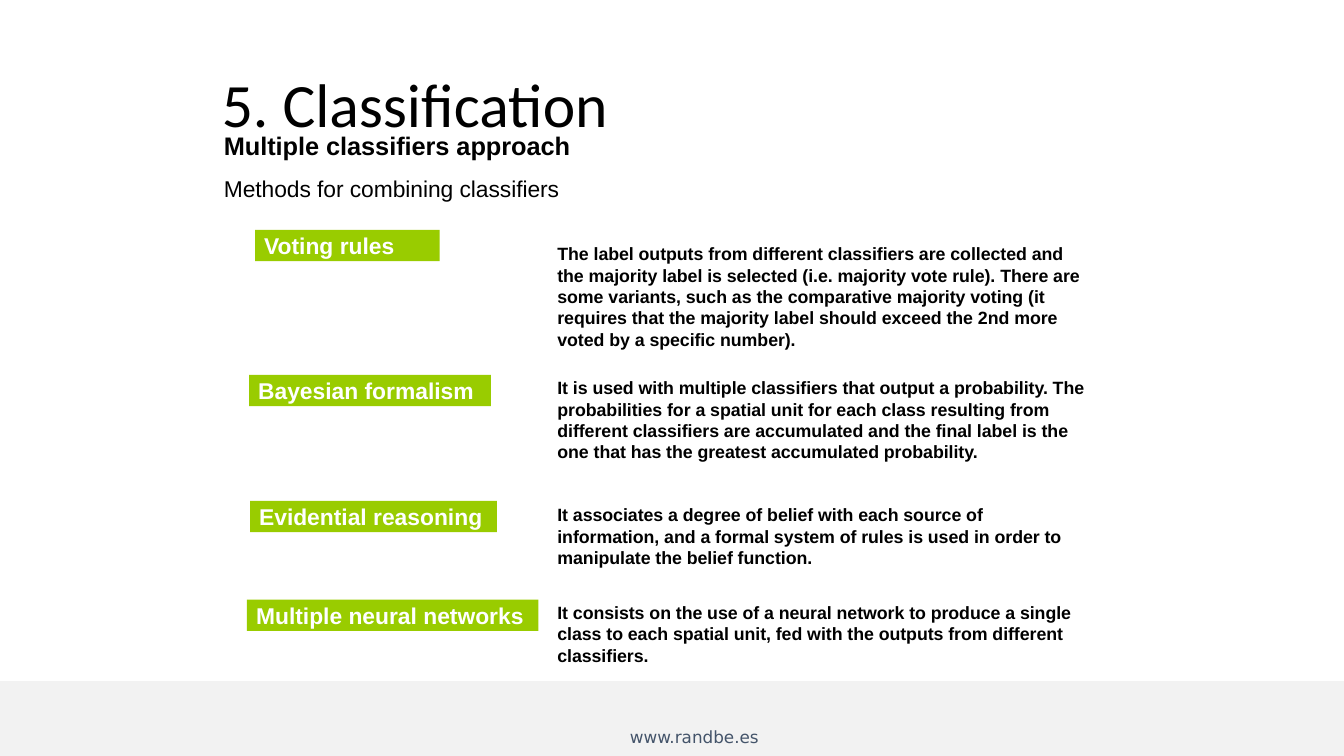
from pptx import Presentation
from pptx import util as u
from pptx.dml.color import RGBColor
from pptx.enum import shapes, text

WIDE, HIGH = u.Inches(13.33), u.Inches(7.5)
BLACK = RGBColor(0x00, 0x00, 0x00)
WHITE = RGBColor(0xFF, 0xFF, 0xFF)
GREEN = RGBColor(0x99, 0xCC, 0x00)
GREY = RGBColor(0xF2, 0xF2, 0xF2)
SLATE = RGBColor(0x44, 0x54, 0x6A)
LABEL_HIGH, LINE_HIGH, BODY_LEFT = 4.13, 2.85, 41.4

METHODS = [
    ("Voting rules", (18.98, 30.4, 13.73), (32.13, 39.3, 5),
     "The label outputs from different classifiers are collected and "
     "the majority label is selected (i.e. majority vote rule). There are "
     "some variants, such as the comparative majority voting (it "
     "requires that the majority label should exceed the 2nd more "
     "voted by a specific number)."),
    ("Bayesian formalism", (18.53, 49.6, 18), (49.87, 39.68, 4),
     "It is used with multiple classifiers that output a probability. The "
     "probabilities for a spatial unit for each class resulting from "
     "different classifiers are accumulated and the final label is the "
     "one that has the greatest accumulated probability."),
    ("Evidential reasoning", (18.6, 66.27, 18.38), (66.67, 37.88, 3),
     "It associates a degree of belief with each source of "
     "information, and a formal system of rules is used in order to "
     "manipulate the belief function."),
    ("Multiple neural networks", (18.38, 79.33, 21.68), (79.6, 38.55, 3),
     "It consists on the use of a neural network to produce a single "
     "class to each spatial unit, fed with the outputs from different "
     "classifiers."),
]


def place(left, top, wide, high):
    """Turn percentages of the slide into lengths."""
    return (int(WIDE * left / 100), int(HIGH * top / 100),
            int(WIDE * wide / 100), int(HIGH * high / 100))


def setup(frame, left=0.01, top=0, anchor=text.MSO_ANCHOR.TOP):
    """Set the insets, wrapping and anchor of a text frame."""
    frame.word_wrap = True
    frame.auto_size = text.MSO_AUTO_SIZE.NONE
    frame.vertical_anchor = anchor
    frame.margin_left, frame.margin_top = u.Inches(left), u.Inches(top)
    frame.margin_right = frame.margin_bottom = 0
    return frame


def write(para, words, size, color=BLACK, bold=False, face="Arial", tight=True):
    """Add one formatted run to a left-aligned paragraph."""
    para.alignment = text.PP_ALIGN.LEFT
    run = para.add_run()
    run.text = words
    font = run.font
    font.name, font.size, font.bold = face, u.Pt(size), bold
    font.color.rgb = color
    if tight:
        font._element.set("spc", "-5")


def block(slide, box, fill):
    """Draw a plain filled rectangle."""
    shape = slide.shapes.add_shape(shapes.MSO_SHAPE.RECTANGLE, *place(*box))
    shape.shadow.inherit = False
    shape.fill.solid()
    shape.fill.fore_color.rgb = fill
    shape.line.fill.background()
    return shape


def label(slide, words, left, top, wide):
    """Draw a green method label."""
    shape = block(slide, (left, top, wide, LABEL_HIGH), GREEN)
    frame = setup(shape.text_frame, 0.09, anchor=text.MSO_ANCHOR.MIDDLE)
    write(frame.paragraphs[0], words, 16.3, WHITE, True, tight=False)


def area(slide, box, left=0.01, top=0):
    """Add a text box and return its frame."""
    return setup(slide.shapes.add_textbox(*place(*box)).text_frame, left, top)


def detail(slide, words, top, wide, lines):
    """Add the description of a method."""
    frame = area(slide, (BODY_LEFT, top, wide, lines * LINE_HIGH))
    write(frame.paragraphs[0], words, 12.7, bold=True)


def footer(slide):
    """Draw the grey band with the web address."""
    band = block(slide, (0, 90.13, 100, 9.87), GREY)
    band.line.color.rgb = GREY
    band.line.width = u.Pt(1)
    frame = area(slide, (46.13, 95.47, 12.9, 4), 0.1, 0.05)
    write(frame.paragraphs[0], "www.randbe.es", 12, SLATE,
          face="DejaVu Sans", tight=False)


def heading(slide):
    """Fill the title and the two lines below it."""
    title = slide.shapes.title
    title.left, title.top, title.width, title.height = place(
        16.43, 8.67, 78.3, 9.87)
    para = setup(title.text_frame, anchor=text.MSO_ANCHOR.MIDDLE).paragraphs[0]
    write(para, "5. ", 44, face="Calibri", tight=False)
    write(para, "Classification", 44, face="Calibri")
    frame = area(slide, (16.58, 17.2, 26.1, 9.6))
    write(frame.paragraphs[0], "Multiple classifiers approach", 18.1, bold=True)
    para = frame.add_paragraph()
    para.space_before = u.Pt(9.8)
    write(para, "Methods for combining classifiers", 16.3)


def main():
    """Build and save the slide."""
    deck = Presentation()
    deck.slide_width, deck.slide_height = WIDE, HIGH
    slide = deck.slides.add_slide(deck.slide_layouts[5])
    footer(slide)
    for name, spot, body, words in METHODS:
        label(slide, name, *spot)
        detail(slide, words, *body)
    heading(slide)
    deck.save("out.pptx")


if __name__ == "__main__":
    main()
